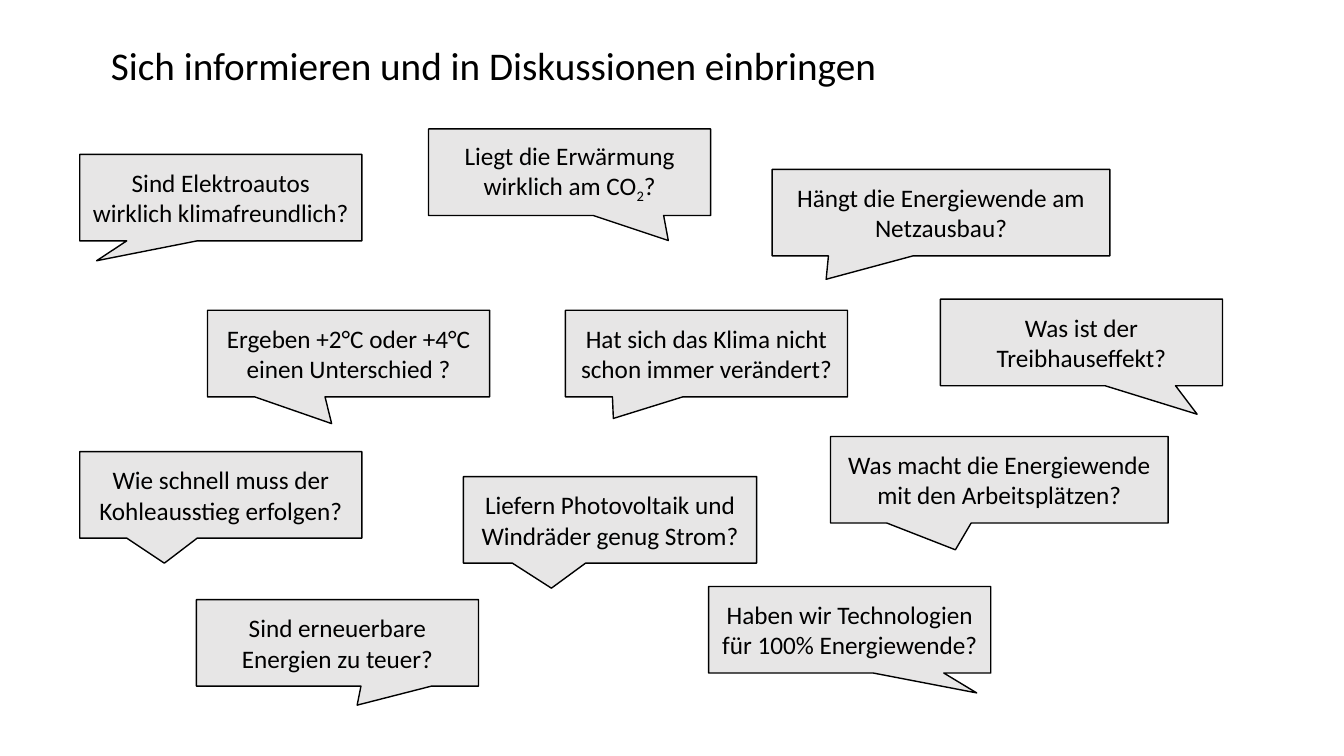
"""Build a slide of climate questions in speech bubbles."""
from pptx import Presentation
from pptx.dml.color import RGBColor
from pptx.enum.shapes import MSO_SHAPE as Shape
from pptx.enum.text import MSO_ANCHOR as Anchor, PP_ALIGN as Align
from pptx.util import Cm, Pt

COLORS = {"text": "000000", "outline": "000000", "bubble": "E7E6E6"}
FONT = "Calibri"
HEADING = "Sich informieren und in Diskussionen einbringen"
BUBBLE_HEIGHT = 2.18
NARROW, MEDIUM, WIDE = 7.11, 7.39, 8.51

# question runs, left, top, width, pointer tip
QUESTIONS = [
    (["Sind Elektroautos wirklich klimafreundlich?"], 2.01, 3.89, NARROW, (-0.44, 0.73)),
    (["Ergeben +2°C oder +4°C einen Unterschied ?"], 5.23, 7.82, NARROW, (-0.06, 0.81)),
    (["Liegt die Erwärmung wirklich am CO", "2", "?"], 10.8, 3.25, NARROW, (0.35, 0.79)),
    (["Hat sich das Klima nicht schon immer verändert?"], 14.25, 7.82, NARROW, (-0.33, 0.75)),
    (["Liefern Photovoltaik und Windräder genug Strom?"], 11.68, 12.01, MEDIUM, (-0.2, 0.79)),
    (["Hängt die Energiewende am Netzausbau?"], 19.46, 4.27, WIDE, (-0.34, 0.77)),
    (["Was macht die Energiewende mit den Arbeitsplätzen?"], 20.93, 11, WIDE, (-0.13, 0.81)),
    (["Wie schnell muss der Kohleausstieg erfolgen?"], 2.01, 11.38, NARROW, (-0.2, 0.79)),
    (["Sind erneuerbare Energien zu teuer?"], 4.95, 15.11, NARROW, (0.07, 0.72)),
    (["Haben wir Technologien für 100% Energiewende?"], 17.86, 14.78, NARROW, (0.45, 0.73)),
    (["Was ist der Treibhauseffekt?"], 23.7, 7.54, NARROW, (0.41, 0.83)),
]


def color(part):
    return RGBColor.from_string(COLORS[part])


def write(frame, parts, size, align):
    frame.word_wrap = True
    frame.vertical_anchor = Anchor.MIDDLE
    paragraph = frame.paragraphs[0]
    paragraph.alignment = align
    for part in parts:
        run = paragraph.add_run()
        run.text = part
        run.font.name = FONT
        run.font.size = Pt(size)
        run.font.color.rgb = color("text")
        if part.isdigit():
            run.font._element.set("baseline", "-25000")


presentation = Presentation()
presentation.slide_width, presentation.slide_height = Cm(33.87), Cm(19.05)
slide = presentation.slides.add_slide(presentation.slide_layouts[5])

heading = slide.shapes.title
heading.left, heading.top, heading.width, heading.height = Cm(2.54), Cm(0.91), Cm(20.98), Cm(1.45)
write(heading.text_frame, [HEADING], 28, Align.LEFT)

for question, left, top, width, tip in QUESTIONS:
    bubble = slide.shapes.add_shape(
        Shape.RECTANGULAR_CALLOUT, Cm(left), Cm(top), Cm(width), Cm(BUBBLE_HEIGHT))
    bubble.adjustments[0], bubble.adjustments[1] = tip
    bubble.shadow.inherit = False
    bubble.fill.solid()
    bubble.fill.fore_color.rgb = color("bubble")
    bubble.line.color.rgb = color("outline")
    bubble.line.width = Pt(1)
    write(bubble.text_frame, question, 18, Align.CENTER)

presentation.save("out.pptx")
